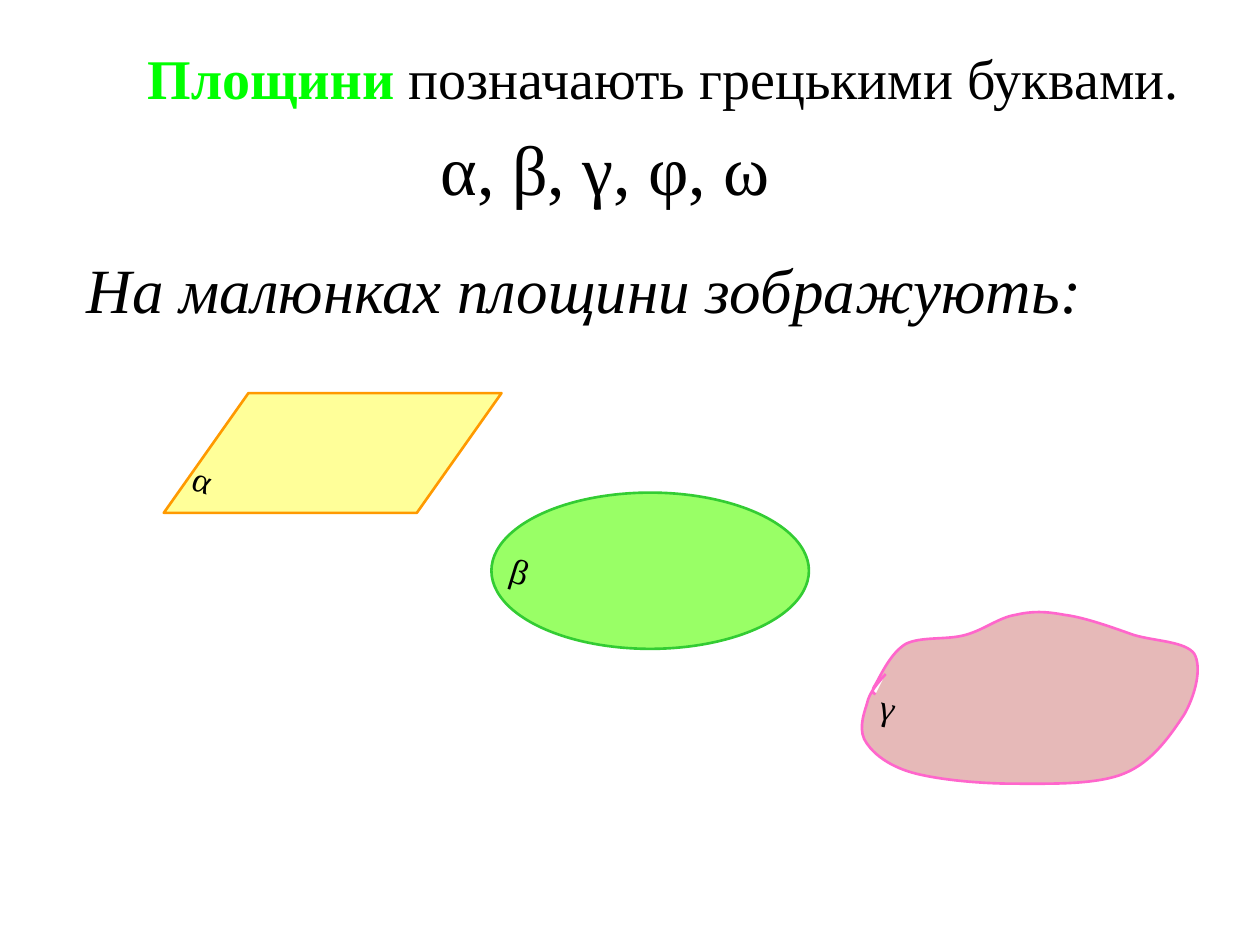
import pptx
import pptx.util
import pptx.dml.color
import pptx.enum.shapes
import pptx.enum.text
import pptx.oxml
import pptx.oxml.ns

Inches = pptx.util.Inches
SHAPE = pptx.enum.shapes.MSO_SHAPE

COLORS = {
    "black": "000000", "accent": "00FF00",
    "yellow": "FFFF99", "orange": "FF9900",
    "lime": "99FF66", "green": "33CC33",
    "rose": "E6B9B8", "pink": "FF66CC",
}
FONT = "Times New Roman"

# Texts: place, rotation, wrap, spans of (text, size, colour, format)
SUBHEADING = ((0.59, 1.94, 8.18, 0.71), 0, False, [
    ("На малюнках площини зображують:", 36, "black", {"italic": True}),
])
LABELS = [
    ((1.44, 3.59, 0.36, 0.43), 18.4, False, [("α", 20, "black", {})]),
    ((3.96, 4.32, 0.36, 0.43), 17, False, [("β", 20, "black", {})]),
    ((6.89, 5.4, 0.34, 0.43), 14.1, False, [("γ", 20, "black", {})]),
]
HEADINGS = [
    ((1.07, 0.3, 8.47, 0.64), 0, False, [
        ("Площини", 32, "accent", {"bold": True}),
        (" позначають грецькими буквами.", 32, "black", {"bold": False}),
    ]),
    ((3.4, 0.95, 3.42, 0.77), 0, True, [("α, β, γ, φ, ω", 40, "black", {})]),
]

# Planes: preset, place, adjustments, fill, line
PLANES = [
    (SHAPE.PARALLELOGRAM, (1.3, 3.12, 2.68, 0.95), [0.707], "yellow", "orange"),
    (SHAPE.OVAL, (3.9, 3.91, 2.52, 1.24), [], "lime", "green"),
]

# Curved plane: start point, then two control points and an end per curve
BLOB_START = (7.03, 5.35)
BLOB_CURVES = [
    ((6.97, 5.42), (6.9, 5.49), (6.88, 5.59)),
    ((6.85, 5.68), (6.81, 5.81), (6.88, 5.9)),
    ((6.94, 5.99), (7.07, 6.09), (7.27, 6.14)),
    ((7.47, 6.19), (7.78, 6.22), (8.06, 6.22)),
    ((8.33, 6.22), (8.7, 6.23), (8.92, 6.14)),
    ((9.15, 6.05), (9.3, 5.82), (9.4, 5.67)),
    ((9.49, 5.51), (9.54, 5.3), (9.48, 5.19)),
    ((9.41, 5.09), (9.17, 5.09), (9, 5.04)),
    ((8.83, 4.98), (8.61, 4.9), (8.45, 4.88)),
    ((8.29, 4.85), (8.19, 4.85), (8.06, 4.88)),
    ((7.93, 4.9), (7.81, 5), (7.66, 5.04)),
    ((7.52, 5.08), (7.31, 5.05), (7.19, 5.11)),
    ((7.07, 5.18), (6.99, 5.36), (6.95, 5.43)),
    ((6.91, 5.49), (6.93, 5.5), (6.95, 5.51)),
]


def rgb(name):
    return pptx.dml.color.RGBColor.from_string(COLORS[name])


def paint(shape, fill, line):
    shape.shadow.inherit = False
    shape.fill.solid()
    shape.fill.fore_color.rgb = rgb(fill)
    shape.line.color.rgb = rgb(line)
    shape.line.width = pptx.util.Pt(1.5)


def add_curved_shape(page, start, curves):
    """Build an outline through all points, then join each three as a curve."""
    builder = page.shapes.build_freeform(*map(Inches, start))
    points = [tuple(map(Inches, point)) for curve in curves for point in curve]
    builder.add_line_segments(points, close=False)
    shape = builder.convert_to_shape()
    lines = shape.element.xpath(".//a:path/a:lnTo")
    for first in range(0, len(lines), 3):
        curve = pptx.oxml.parse_xml(
            f"<a:cubicBezTo {pptx.oxml.ns.nsdecls('a')}/>")
        lines[first].addprevious(curve)
        for line in lines[first:first + 3]:
            curve.append(line[0])
            line.getparent().remove(line)
    return shape


def add_text(page, place, rotation, wrap, spans):
    box = page.shapes.add_textbox(*map(Inches, place))
    box.rotation = rotation
    box.text_frame.word_wrap = wrap
    box.text_frame.auto_size = pptx.enum.text.MSO_AUTO_SIZE.SHAPE_TO_FIT_TEXT
    para = box.text_frame.paragraphs[0]
    for text, size, color, extra in spans:
        span = para.add_run()
        span.text = text
        span.font.color.rgb = rgb(color)
        values = {"name": FONT, "size": pptx.util.Pt(size), **extra}
        for key, value in values.items():
            setattr(span.font, key, value)


def main():
    deck = pptx.Presentation()
    deck.slide_width, deck.slide_height = Inches(10), Inches(7.5)
    page = deck.slides.add_slide(deck.slide_layouts[6])

    add_text(page, *SUBHEADING)

    # Parallelogram and ellipse
    for preset, place, adjustments, fill, line in PLANES:
        shape = page.shapes.add_shape(preset, *map(Inches, place))
        for index, value in enumerate(adjustments):
            shape.adjustments[index] = value
        paint(shape, fill, line)

    # Curved plane
    paint(add_curved_shape(page, BLOB_START, BLOB_CURVES), "rose", "pink")

    # Plane labels, then headings
    for item in LABELS + HEADINGS:
        add_text(page, *item)

    deck.save("out.pptx")


if __name__ == "__main__":
    main()
